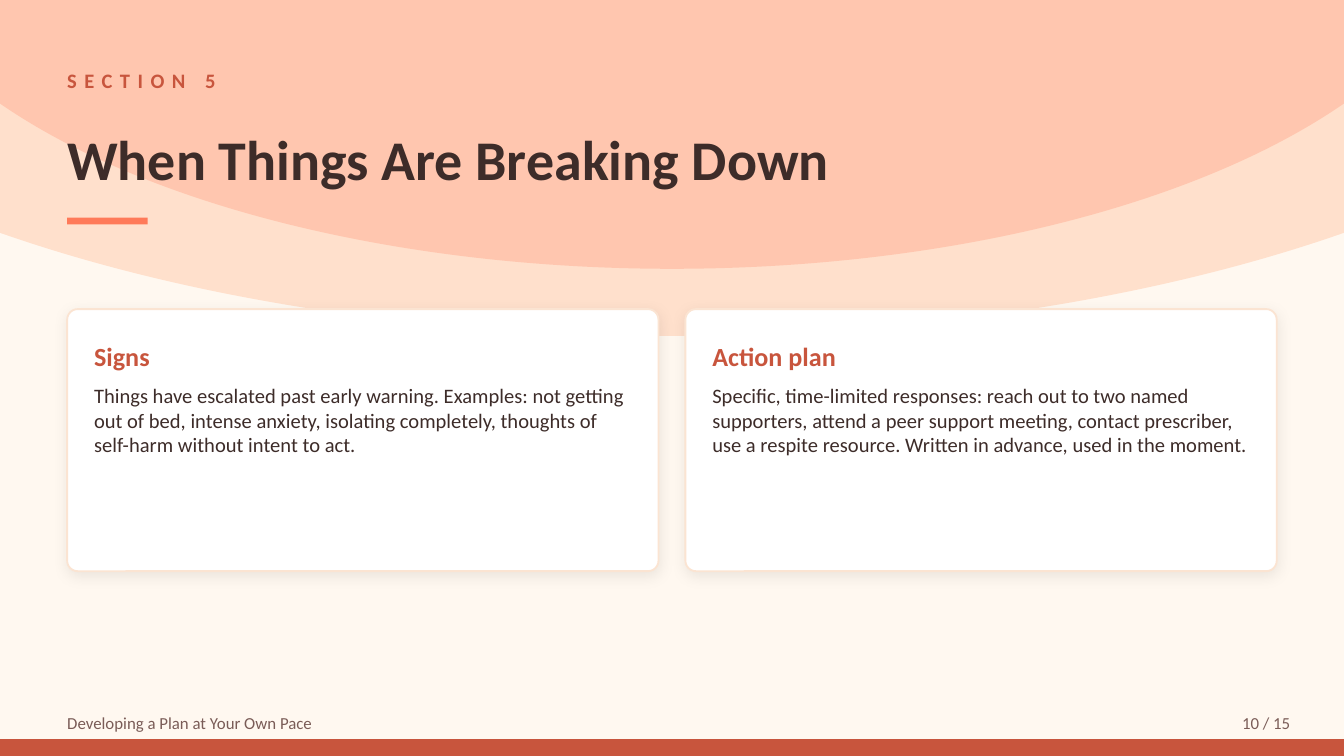
from lxml.etree import SubElement
from pptx import Presentation
from pptx.dml.color import RGBColor
from pptx.enum.shapes import MSO_SHAPE as SHAPE
from pptx.enum.text import MSO_ANCHOR as ANCHOR, PP_ALIGN as ALIGN
from pptx.oxml.ns import qn
from pptx.util import Pt

# Content
SECTION = "SECTION 5"
TITLE = "When Things Are Breaking Down"
CARDS = [
    ("Signs", "Things have escalated past early warning. Examples: not getting "
              "out of bed, intense anxiety, isolating completely, thoughts of "
              "self-harm without intent to act."),
    ("Action plan", "Specific, time-limited responses: reach out to two named "
                    "supporters, attend a peer support meeting, contact prescriber, "
                    "use a respite resource. Written in advance, used in the moment."),
]
FOOTER = "Developing a Plan at Your Own Pace"
PAGE = "10 / 15"

# Look
FONT = "Calibri"
CREAM = RGBColor(0xFF, 0xF8, 0xF0)
PEACH = RGBColor(0xFF, 0xB4, 0x8A)
CORAL = RGBColor(0xFF, 0x7A, 0x59)
RUST = RGBColor(0xC8, 0x55, 0x3D)
BROWN = RGBColor(0x3D, 0x2C, 0x29)
MUTED = RGBColor(0x7A, 0x5C, 0x57)
EDGE = RGBColor(0xFB, 0xE4, 0xD2)
WHITE = RGBColor(0xFF, 0xFF, 0xFF)

# Layout in points
WIDTH, HEIGHT = 720, 405
MARGIN, GAP, PAD = 36, 14.4, 14.4
CONTENT_W = WIDTH - 2 * MARGIN
CARD_TOP, CARD_H = 165.6, 140.4
CARD_W = (CONTENT_W - GAP * (len(CARDS) - 1)) / len(CARDS)
BAR_H = 9


def add_shape(s, kind, x, y, w, h, fill, alpha=None, line=None):
    sp = s.shapes.add_shape(kind, Pt(x), Pt(y), Pt(w), Pt(h))
    sp.shadow.inherit = False
    sp.fill.solid()
    sp.fill.fore_color.rgb = fill
    if alpha is not None:
        color = sp.element.spPr.find(qn("a:solidFill"))[0]
        SubElement(color, qn("a:alpha"), val=str(alpha * 1000))
    if line is None:
        sp.line.fill.background()
    else:
        sp.line.color.rgb = line
        sp.line.width = Pt(1)
    return sp


def add_soft_shadow(sp):
    effects = sp.element.spPr.find(qn("a:effectLst"))
    shadow = SubElement(effects, qn("a:outerShdw"), blurRad=str(Pt(8)), dist=str(Pt(2)),
                        dir=str(90 * 60000), algn="bl", rotWithShape="0")
    color = SubElement(shadow, qn("a:srgbClr"), val="000000")
    SubElement(color, qn("a:alpha"), val="8000")


def add_text(s, text, x, y, w, h, size=11, color=BROWN, bold=False, align=ALIGN.LEFT,
             anchor=ANCHOR.MIDDLE, spacing=None, box=None):
    if box is None:
        box = s.shapes.add_textbox(0, 0, 0, 0)
    box.left, box.top, box.width, box.height = Pt(x), Pt(y), Pt(w), Pt(h)
    tf = box.text_frame
    tf.word_wrap = True
    tf.vertical_anchor = anchor
    tf.margin_left = tf.margin_right = tf.margin_top = tf.margin_bottom = 0
    p = tf.paragraphs[0]
    p.alignment = align
    p.line_spacing = 1.0
    p.space_before = Pt(0)
    r = p.add_run()
    r.text = text
    r.font.name, r.font.size, r.font.bold = FONT, Pt(size), bold
    r.font.color.rgb = color
    if spacing:
        r.font._element.set("spc", str(spacing * 100))
    return box


def main():
    prs = Presentation()
    prs.slide_width, prs.slide_height = Pt(WIDTH), Pt(HEIGHT)
    s = prs.slides.add_slide(prs.slide_layouts[5])
    s.background.fill.solid()
    s.background.fill.fore_color.rgb = CREAM

    # Sunrise arcs and bottom bar
    add_shape(s, SHAPE.OVAL, -216, -324, 1152, 504, PEACH, alpha=35)
    add_shape(s, SHAPE.OVAL, -72, -252, 864, 396, CORAL, alpha=25)
    add_shape(s, SHAPE.RECTANGLE, 0, HEIGHT - BAR_H, WIDTH, BAR_H, RUST)

    # Footer
    add_text(s, FOOTER, MARGIN, 378, 420, 18, size=9, color=MUTED)
    add_text(s, PAGE, 648, 378, 43.2, 18, size=9, color=MUTED, align=ALIGN.RIGHT)

    # Heading, with the title brought in front of the arcs
    add_text(s, SECTION, MARGIN, 32.4, CONTENT_W, 21.6, color=RUST, bold=True, spacing=4)
    title = add_text(s, TITLE, MARGIN, 54, CONTENT_W, 61.2, size=30, bold=True,
                     box=s.shapes.title)
    title.element.getparent().append(title.element)
    add_shape(s, SHAPE.RECTANGLE, MARGIN, 116.64, 43.2, 3.6, CORAL)

    # Cards
    for i, (heading, body) in enumerate(CARDS):
        x = MARGIN + i * (CARD_W + GAP)
        card = add_shape(s, SHAPE.ROUNDED_RECTANGLE, x, CARD_TOP, CARD_W, CARD_H,
                         WHITE, line=EDGE)
        card.adjustments[0] = 0.04
        add_soft_shadow(card)
        text_x, text_w = x + PAD, CARD_W - 2 * PAD
        add_text(s, heading, text_x, CARD_TOP + 10.8, text_w, 28.8, size=14,
                 color=RUST, bold=True)
        add_text(s, body, text_x, CARD_TOP + 39.6, text_w, 90, anchor=ANCHOR.TOP)

    prs.save("out.pptx")


if __name__ == "__main__":
    main()
